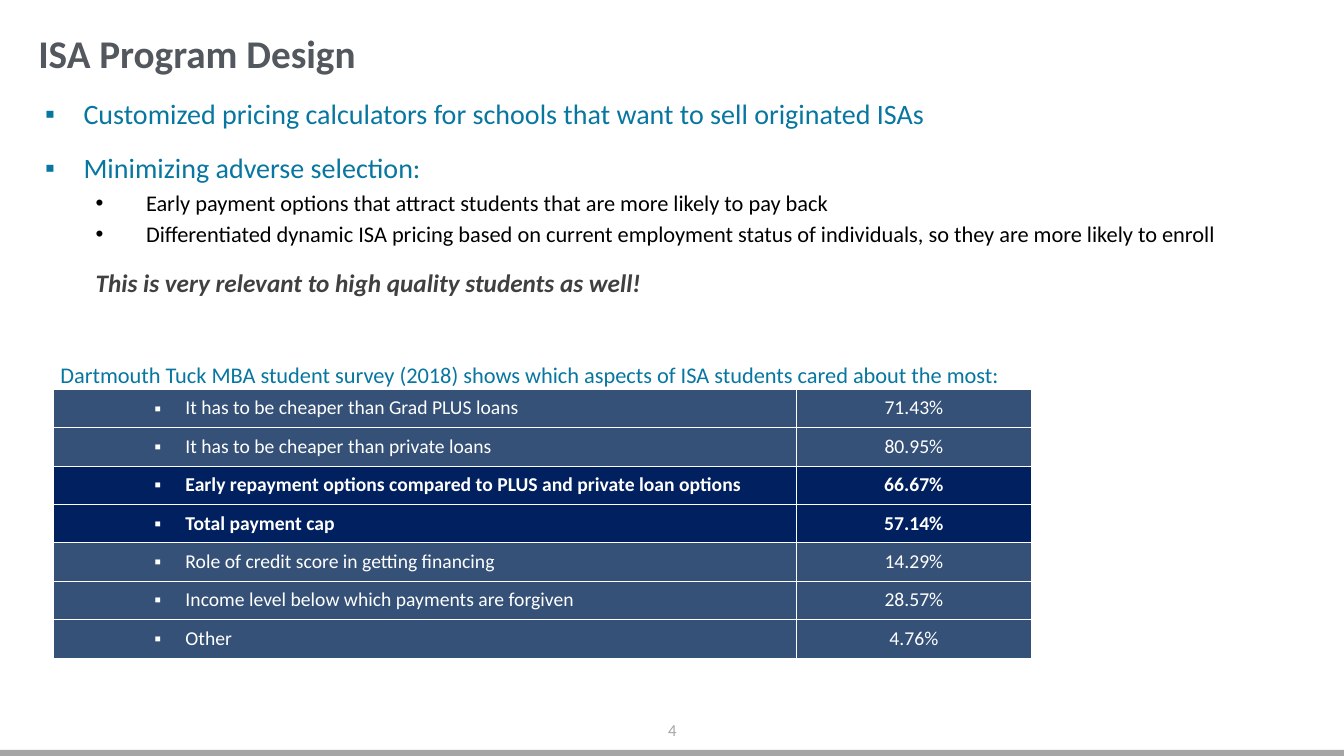
from lxml import etree
from pptx import Presentation
from pptx.dml.color import RGBColor
from pptx.enum.shapes import MSO_SHAPE as Preset
from pptx.enum.text import MSO_ANCHOR as Anchor, PP_ALIGN as Align
from pptx.oxml.ns import qn
from pptx.util import Inches, Pt

TEAL = RGBColor(0x07, 0x76, 0xA0)
SLATE = RGBColor(0x53, 0x58, 0x5F)
BLACK = RGBColor(0, 0, 0)
CHARCOAL = RGBColor(0x40, 0x40, 0x40)
GRAY = RGBColor(0xA5, 0xA5, 0xA5)
PALE_GRAY = RGBColor(0xA6, 0xA6, 0xA6)
WHITE = RGBColor(0xFF, 0xFF, 0xFF)
STEEL = RGBColor(0x35, 0x51, 0x77)
NAVY = RGBColor(0x00, 0x20, 0x60)

POINTS = [
    ("Customized pricing calculators for schools that want to sell originated ISAs", "main", 12),
    ("Minimizing adverse selection:", "main", 0),
    ("Early payment options that attract students that are more likely to pay back", "detail", 0),
    ("Differentiated dynamic ISA pricing based on current employment status of individuals, "
     "so they are more likely to enroll", "detail", 12),
    ("This is very relevant to high quality students as well!", "remark", 0),
]
POINT_STYLES = {
    "main": dict(left=0.38, hang=0.38, mark="▪", size=20, color=TEAL),
    "detail": dict(left=1, hang=0.5, mark="•", size=16, color=BLACK),
    "remark": dict(left=0.5, hang=0, mark=None, size=18, color=CHARCOAL, bold=True, italic=True),
}
CAPTION = ("Dartmouth Tuck MBA student survey (2018) shows which aspects of ISA students "
           "cared about the most:")
SURVEY = [
    ("It has to be cheaper than Grad PLUS loans", "71.43%", False),
    ("It has to be cheaper than private loans", "80.95%", False),
    ("Early repayment options compared to PLUS and private loan options", "66.67%", True),
    ("Total payment cap", "57.14%", True),
    ("Role of credit score in getting financing", "14.29%", False),
    ("Income level below which payments are forgiven", "28.57%", False),
    ("Other", "4.76%", False),
]


class SlideBuilder:
    """Holds the style and current slide, placing elements on a 0.05-inch grid."""

    font = "Calibri"
    unit = Inches(0.05)

    def __init__(self, deck):
        self.page = deck.slides.add_slide(deck.slide_layouts[5])

    def grid(self, *cells):
        return [round(cell * self.unit) for cell in cells]

    def format(self, para, size, color, bold=False, italic=False, align=Align.LEFT):
        para.alignment = align
        for span in para.runs:
            font = span.font
            font.name, font.size, font.bold, font.italic = self.font, Pt(size), bold, italic
            font.color.rgb = color

    def indent(self, para, left, hang, mark):
        props = para._p.get_or_add_pPr()
        props.set("marL", str(Inches(left)))
        props.set("indent", str(-Inches(hang)))
        if mark:
            etree.SubElement(props, qn("a:buFont")).set("typeface", "Arial")
            etree.SubElement(props, qn("a:buChar")).set("char", mark)
        else:
            etree.SubElement(props, qn("a:buNone"))

    def title(self, text, *area):
        box = self.page.shapes.title
        box.left, box.top, box.width, box.height = self.grid(*area)
        frame = box.text_frame
        frame.text = text
        frame.vertical_anchor = Anchor.MIDDLE
        frame.paragraphs[0].line_spacing = 0.9
        self.format(frame.paragraphs[0], 28, SLATE, bold=True)

    def bar(self, color, *area):
        shape = self.page.shapes.add_shape(Preset.RECTANGLE, *self.grid(*area))
        shape.shadow.inherit = False
        shape.fill.solid()
        shape.fill.fore_color.rgb = color
        shape.line.fill.background()

    def text_frame(self, text, *area):
        frame = self.page.shapes.add_textbox(*self.grid(*area)).text_frame
        frame.word_wrap = True
        frame.text = text
        return frame

    def page_number(self, text, *area):
        frame = self.text_frame(text, *area)
        self.format(frame.paragraphs[0], 12, PALE_GRAY, align=Align.CENTER)

    def bullets(self, points, *area):
        frame = self.text_frame("\n".join(text for text, _, _ in points), *area)
        for index, (para, (_, kind, after)) in enumerate(zip(frame.paragraphs, points)):
            style = dict(POINT_STYLES[kind])
            self.indent(para, style.pop("left"), style.pop("hang"), style.pop("mark"))
            para.line_spacing = 0.9
            para.space_before = Pt(5 if index else 0)
            para.space_after = Pt(after)
            self.format(para, **style)

    def cell(self, cell, text, fill, inset=0.07, mark=None, anchor=Anchor.MIDDLE, **style):
        cell.margin_left, cell.margin_right = Inches(inset), Inches(0.07)
        cell.margin_top = cell.margin_bottom = 0
        cell.vertical_anchor = anchor
        for side in ("lnL", "lnR", "lnT", "lnB"):
            line = etree.SubElement(cell._tc.get_or_add_tcPr(), qn(f"a:{side}"), w=str(Pt(0.25)))
            paint = etree.SubElement(line, qn("a:solidFill"))
            etree.SubElement(paint, qn("a:srgbClr")).set("val", str(WHITE))
        if fill is None:
            cell.fill.background()
        else:
            cell.fill.solid()
            cell.fill.fore_color.rgb = fill
        cell.text = text
        para = cell.text_frame.paragraphs[0]
        if mark:
            self.indent(para, 0.31, 0.31, mark)
        self.format(para, **style)

    def survey_table(self, caption, answers, left, top, widths, caption_height, row_height):
        height = caption_height + row_height * len(answers)
        area = self.grid(left, top, sum(widths), height)
        table = self.page.shapes.add_table(len(answers) + 1, len(widths), *area).table
        table.first_row = table.horz_banding = False
        for column, width in zip(table.columns, self.grid(*widths)):
            column.width = width
        heights = self.grid(caption_height, *[row_height] * len(answers))
        for row, height in zip(table.rows, heights):
            row.height = height
        table.cell(0, 0).merge(table.cell(0, 1))
        self.cell(table.cell(0, 0), caption, None, anchor=Anchor.BOTTOM, size=16, color=TEAL)
        for row, (aspect, share, key) in enumerate(answers, start=1):
            style = dict(fill=NAVY if key else STEEL, size=14, color=WHITE, bold=key)
            self.cell(table.cell(row, 0), aspect, inset=1, mark="▪", **style)
            self.cell(table.cell(row, 1), share, align=Align.CENTER, **style)


def main():
    """Build the ISA program design slide."""
    deck = Presentation()
    deck.slide_width, deck.slide_height = Inches(13.33), Inches(7.5)
    slide = SlideBuilder(deck)
    slide.bar(GRAY, 0, 148.8, 266.6, 1.2)
    slide.page_number("4", 120.8, 141.8, 25.2, 6)
    slide.title("ISA Program Design", 5.6, 3, 230, 16)
    slide.bullets(POINTS, 7, 19, 255, 55.6)
    slide.survey_table(CAPTION, SURVEY, 10.6, 70.6, (147.4, 46.6), 6.6, 7.62)
    deck.save("out.pptx")


if __name__ == "__main__":
    main()
